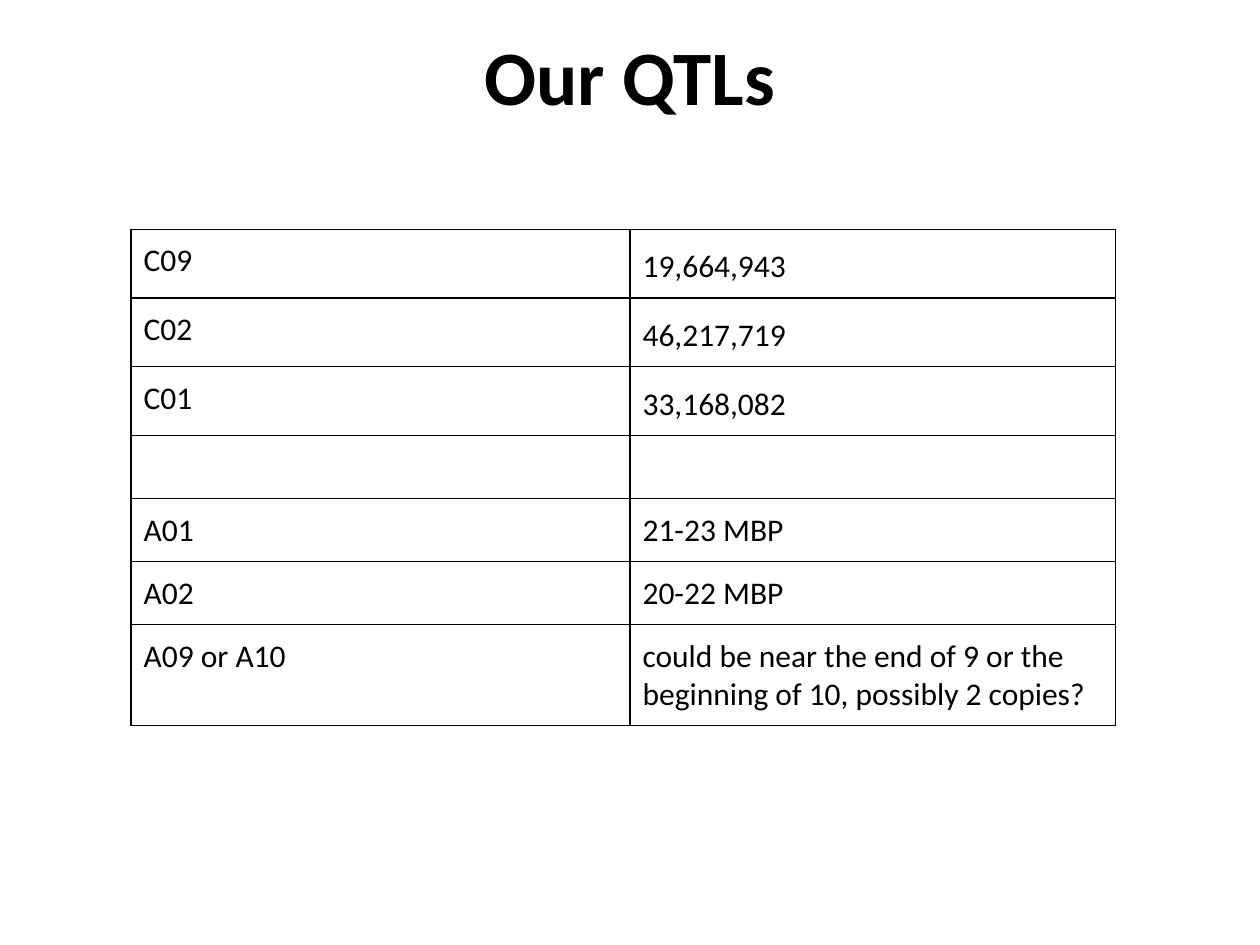
from lxml.etree import SubElement
from pptx import Presentation
from pptx.dml.color import RGBColor
from pptx.enum.text import MSO_ANCHOR, PP_ALIGN
from pptx.oxml.ns import qn
from pptx.util import Inches, Pt

BLACK = "000000"
QTLS = [
    ("C09", "19,664,943"),
    ("C02", "46,217,719"),
    ("C01", "33,168,082"),
    ("", ""),
    ("A01", "21-23 MBP"),
    ("A02", "20-22 MBP"),
    ("A09 or A10", "could be near the end of 9 or the beginning of 10, possibly 2 copies?"),
]
COLUMN_WIDTHS = [3.96, 3.85]
ROW_HEIGHTS = [0.42] * 3 + [0.39] * 3 + [0.59]
POSITION_ROWS = 3


def color(hex_code):
    return RGBColor.from_string(hex_code)


def set_values(target, values):
    for name, value in values.items():
        setattr(target, name, value)


def write(frame, text, size, bold=False):
    para = frame.paragraphs[0]
    if text:
        span = para.add_run()
        span.text = text
        set_values(span.font, {"name": "Calibri", "size": Pt(size), "bold": bold})
        span.font.color.rgb = color(BLACK)
    return para


def add_title(page, text):
    box = page.shapes.add_textbox(Inches(0.5), Inches(0.3), Inches(9), Inches(1.25))
    # The deep bottom margin lifts the centred line towards the top.
    set_values(box.text_frame, {
        "word_wrap": True,
        "vertical_anchor": MSO_ANCHOR.MIDDLE,
        "margin_top": 0,
        "margin_bottom": Inches(0.66),
    })
    write(box.text_frame, text, 44, bold=True).alignment = PP_ALIGN.CENTER


def add_borders(cell, hex_code, width):
    """Draw all four cell edges; call before setting the cell fill."""
    properties = cell._tc.get_or_add_tcPr()
    for edge in ("lnL", "lnR", "lnT", "lnB"):
        line = SubElement(properties, qn(f"a:{edge}"), w=str(Pt(width)))
        fill = SubElement(line, qn("a:solidFill"))
        SubElement(fill, qn("a:srgbClr"), val=hex_code)


def add_qtl_table(page):
    frame = page.shapes.add_table(
        len(QTLS), len(COLUMN_WIDTHS),
        Inches(1.04), Inches(1.82), Inches(sum(COLUMN_WIDTHS)), Inches(3.93))
    table = frame.table
    set_values(table, {"first_row": False, "horz_banding": False})
    for column, width in zip(table.columns, COLUMN_WIDTHS):
        column.width = Inches(width)
    for row, height in zip(table.rows, ROW_HEIGHTS):
        row.height = Inches(height)
    frame.height = Inches(3.93)

    margins = {f"margin_{side}": Inches(0.1) for side in ("left", "right", "top", "bottom")}
    for row_index, texts in enumerate(QTLS):
        for column_index, text in enumerate(texts):
            cell = table.cell(row_index, column_index)
            set_values(cell, margins)
            add_borders(cell, BLACK, 0.75)
            cell.fill.background()
            para = write(cell.text_frame, text, 18)
            if column_index == 1 and row_index < POSITION_ROWS:
                para.line_spacing = 1.15


def main():
    deck = Presentation()
    set_values(deck, {"slide_width": Inches(10), "slide_height": Inches(7.5)})
    page = deck.slides.add_slide(deck.slide_layouts[6])
    add_title(page, "Our QTLs")
    add_qtl_table(page)
    deck.save("out.pptx")


if __name__ == "__main__":
    main()
